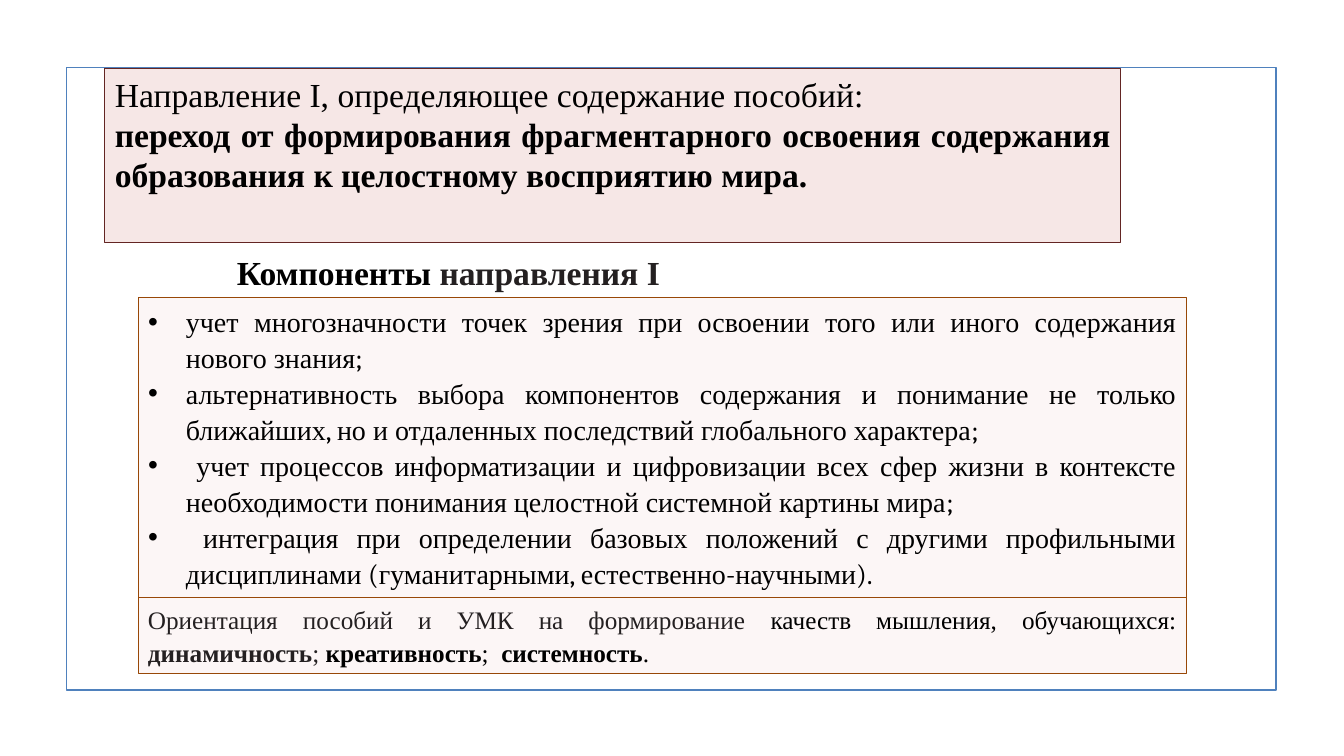
from dataclasses import dataclass

from pptx import Presentation
from pptx.dml.color import RGBColor
from pptx.enum.shapes import MSO_SHAPE
from pptx.enum.text import MSO_ANCHOR, MSO_AUTO_SIZE, PP_ALIGN
from pptx.util import Cm, Pt

RECT = MSO_SHAPE.RECTANGLE
TOP = MSO_ANCHOR.TOP
NO_FIT = MSO_AUTO_SIZE.NONE
JUSTIFY = PP_ALIGN.JUSTIFY


@dataclass(frozen=True)
class Theme:
    font: str = "Times New Roman"
    mark_font: str = "Cambria"
    black: str = "000000"
    soft: str = "242021"
    frame: str = "4F81BD"
    header_fill: str = "F6E7E6"
    header_line: str = "632523"
    panel_fill: str = "FCF6F6"
    panel_line: str = "984807"
    head_size: int = 24
    list_size: int = 20
    note_size: int = 18
    spacing: float = 1.07


T = Theme()

COMPONENTS = [
    ("учет многозначности точек зрения при освоении того или иного содержания нового знания", ";"),
    ("альтернативность выбора компонентов содержания и понимание не только ближайших", ", ",
     "но и отдаленных последствий глобального характера", ";"),
    ("", " ", "учет процессов информатизации и цифровизации всех сфер жизни в контексте "
     "необходимости понимания целостной системной картины мира", ";"),
    ("", " ", "интеграция при определении базовых положений с другими профильными дисциплинами",
     " (", "гуманитарными", ", ", "естественно", "-", "научными", ")."),
]

NOTE = [
    ("Ориентация пособий и УМК на формирование ", T.soft, False),
    ("качеств мышления, обучающихся: ", T.black, False),
    ("динамичность", T.soft, True),
    ("; ", T.soft, False),
    ("креативность", T.black, True),
    ("; ", T.black, False),
    (" системноcть", T.black, True),
    (". ", T.black, False),
]


def place(sp, box):
    sp.left, sp.top, sp.width, sp.height = (Cm(v) for v in box)


def paint(sp, fill, line, width=0.75):
    if fill:
        sp.fill.solid()
        sp.fill.fore_color.rgb = RGBColor.from_string(fill)
    else:
        sp.fill.background()
    sp.line.color.rgb = RGBColor.from_string(line)
    sp.line.width = Pt(width)


def setup_text(sp, wrap=True):
    tf = sp.text_frame
    tf.word_wrap = wrap
    tf.auto_size = NO_FIT
    tf.vertical_anchor = TOP
    return tf


def format_paragraph(p, spacing=T.spacing, margin=0, indent=0):
    p.alignment = JUSTIFY
    p.line_spacing = spacing
    p.space_before = Pt(0)
    pPr = p._p.get_or_add_pPr()
    pPr.set("marL", str(Cm(margin)))
    pPr.set("indent", str(Cm(indent)))


def add_text(p, text, size, color=T.black, bold=False, font=T.font):
    r = p.add_run()
    r.text = text
    r.font.name = font
    r.font.size = Pt(size)
    r.font.bold = bold
    r.font.color.rgb = RGBColor.from_string(color)


def add_frame(s, box):
    sp = s.shapes.add_shape(RECT, *(Cm(v) for v in box))
    sp.shadow.inherit = False
    paint(sp, None, T.frame, 1.25)


def add_header(s, box):
    sp = s.shapes.title
    place(sp, box)
    paint(sp, T.header_fill, T.header_line)
    tf = setup_text(sp)
    intro, thesis = tf.paragraphs[0], tf.add_paragraph()
    for p in (intro, thesis):
        format_paragraph(p, 1.0)
    add_text(intro, "Направление I, определяющее содержание пособий:", T.head_size)
    add_text(thesis, "переход от формирования фрагментарного освоения содержания "
             "образования к целостному восприятию мира.", T.head_size, bold=True)


def add_heading(s, box):
    sp = s.shapes.add_textbox(*(Cm(v) for v in box))
    p = setup_text(sp, wrap=False).paragraphs[0]
    format_paragraph(p, indent=1.25)
    add_text(p, "Компоненты ", T.head_size, bold=True)
    add_text(p, "направления I", T.head_size, T.soft, True)


def add_components(s, box):
    left, top, width, height = box
    list_height = 7.57
    sp = s.placeholders[1]
    place(sp, (left, top, width, list_height))
    paint(sp, T.panel_fill, T.panel_line)
    tf = setup_text(sp)
    for i, parts in enumerate(COMPONENTS):
        p = tf.add_paragraph() if i else tf.paragraphs[0]
        format_paragraph(p, margin=0.95, indent=-0.95)
        for j, text in enumerate(parts):
            if text:
                add_text(p, text, T.list_size, font=T.mark_font if j % 2 else T.font)
    add_note(s, (left, top + list_height, width, height - list_height))


def add_note(s, box):
    sp = s.shapes.add_shape(RECT, *(Cm(v) for v in box))
    sp.shadow.inherit = False
    paint(sp, T.panel_fill, T.panel_line)
    p = setup_text(sp).paragraphs[0]
    format_paragraph(p)
    for text, color, bold in NOTE:
        add_text(p, text, T.note_size, color, bold)


def main():
    prs = Presentation()
    prs.slide_width, prs.slide_height = Cm(33.87), Cm(19.05)
    s = prs.slides.add_slide(prs.slide_layouts[1])
    add_frame(s, (1.68, 1.7, 30.48, 15.68))
    add_header(s, (2.64, 1.73, 25.6, 4.37))
    add_heading(s, (4.47, 6.15, 12.55, 1.27))
    add_components(s, (3.48, 7.49, 26.42, 9.48))
    prs.save("out.pptx")


if __name__ == "__main__":
    main()
